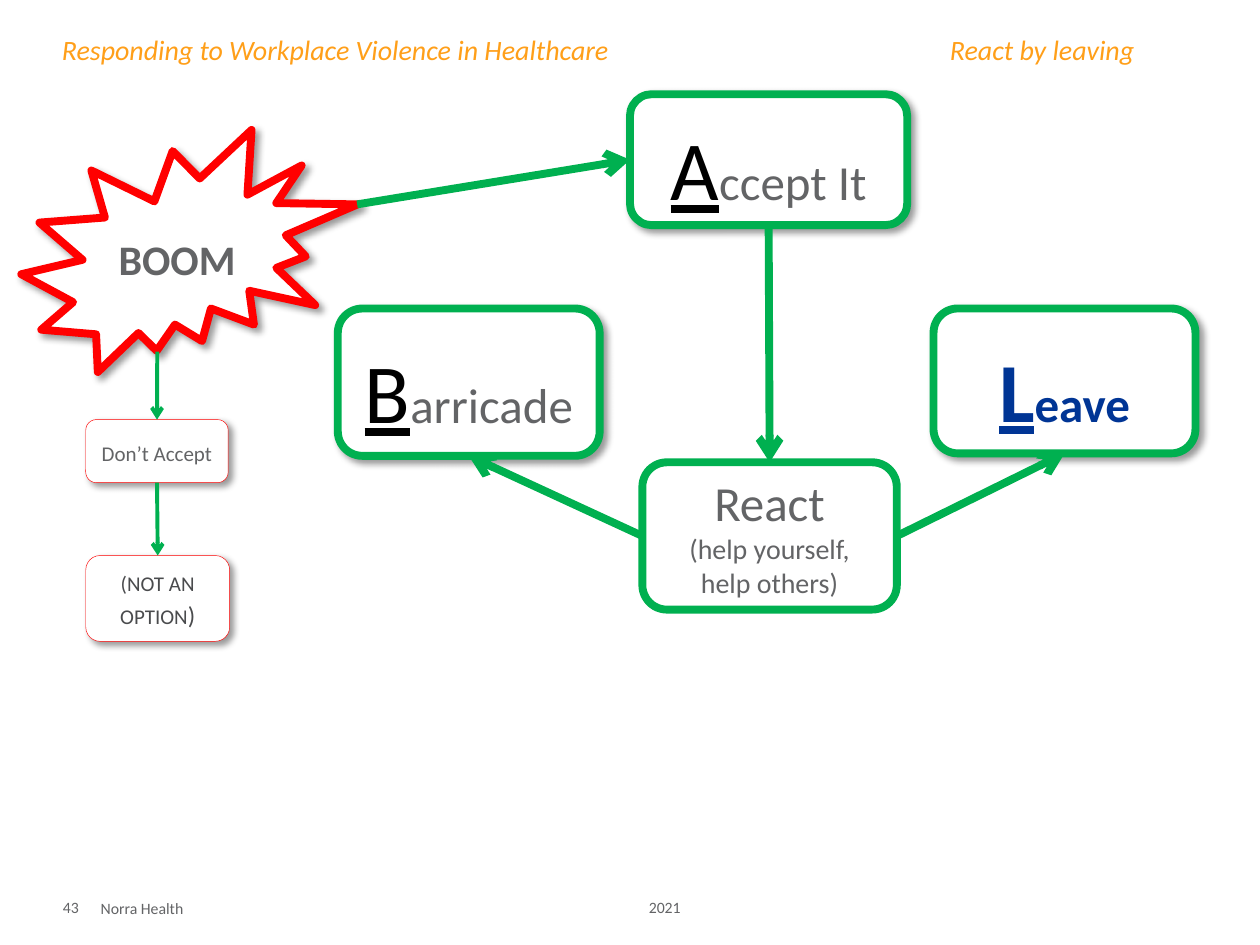
from lxml import etree
from pptx import Presentation
from pptx.dml.color import RGBColor
from pptx.enum.shapes import MSO_CONNECTOR, MSO_SHAPE
from pptx.enum.text import MSO_ANCHOR, PP_ALIGN
from pptx.oxml.ns import qn
from pptx.util import Cm, Pt

SEAL = MSO_SHAPE.EXPLOSION2
ROUND = MSO_SHAPE.ROUNDED_RECTANGLE
LINE = MSO_CONNECTOR.STRAIGHT
TOP, LEFT, BOTTOM, RIGHT = range(4)
HIGH, MIDDLE, LOW = MSO_ANCHOR.TOP, MSO_ANCHOR.MIDDLE, MSO_ANCHOR.BOTTOM
FONT = "Calibri"
HEX = {
    "white": "FFFFFF", "black": "000000", "grey": "636466", "dark": "4A4B4D",
    "red": "FF0000", "green": "00B050", "blue": "003595", "orange": "FF9F19",
}


def color(name):
    return RGBColor.from_string(HEX[name])


def style(run, size, tint="grey", bold=False, under=False, italic=False):
    font = run.font
    font.name, font.size = FONT, Pt(size)
    font.bold, font.underline, font.italic = bold, under, italic
    font.color.rgb = color(tint)


def add_shadow(shape):
    effects = shape._element.spPr.find(qn("a:effectLst"))
    outer = etree.SubElement(effects, qn("a:outerShdw"), blurRad=str(Pt(4)),
                             dist=str(Pt(3)), dir="2700000", algn="tl", rotWithShape="0")
    tint = etree.SubElement(outer, qn("a:srgbClr"), val=HEX["black"])
    etree.SubElement(tint, qn("a:alpha"), val="40000")


def add_box(slide, place, paras, edge="green", width=4.5, kind=ROUND, raised=True):
    """Each paragraph is a list of (text, style options) runs."""
    box = slide.shapes.add_shape(kind, *map(Cm, place))
    box.shadow.inherit = False
    box.fill.solid()
    box.fill.fore_color.rgb = color("white")
    box.line.color.rgb = color(edge)
    box.line.width = Pt(width)
    frame = box.text_frame
    frame.word_wrap = True
    frame.vertical_anchor = MIDDLE
    for i, runs in enumerate(paras):
        para = frame.add_paragraph() if i else frame.paragraphs[0]
        para.alignment = PP_ALIGN.CENTER
        if raised:
            para.line_spacing, para.space_after = 1.15, Pt(10)
        for text, look in runs:
            run = para.add_run()
            run.text = text
            style(run, **look)
    if raised:
        add_shadow(box)
    return box


def add_step(slide, place, first, rest, tint="black", tail="grey", bold=False):
    """Box whose word opens with a large underlined letter."""
    runs = [(first, dict(size=48, tint=tint, under=True, bold=bold)),
            (rest, dict(size=28, tint=tail, bold=bold))]
    return add_box(slide, place, [runs])


def add_arrow(slide, start, end, width=4.5):
    """Start is a point or a (box, side) pair; end is a (box, side) pair."""
    arrow = slide.shapes.add_connector(LINE, 0, 0, 0, 0)
    first, second = start
    if isinstance(first, float):
        arrow.begin_x, arrow.begin_y = Cm(first), Cm(second)
    else:
        arrow.begin_connect(first, second)
    arrow.end_connect(*end)
    arrow.line.color.rgb = color("green")
    arrow.line.width = Pt(width)
    etree.SubElement(arrow.line._get_or_add_ln(), qn("a:tailEnd"), type="arrow")
    etree.SubElement(arrow._element.spPr, qn("a:effectLst"))


def add_text(slide, place, text, anchor, tab=None, inset=0, **look):
    frame = slide.shapes.add_textbox(*map(Cm, place)).text_frame
    frame.word_wrap = True
    frame.vertical_anchor = anchor
    frame.margin_left = frame.margin_right = frame.margin_bottom = 0
    frame.margin_top = Cm(inset)
    para = frame.paragraphs[0]
    para.text = text
    if tab:
        stops = etree.SubElement(para._p.get_or_add_pPr(), qn("a:tabLst"))
        etree.SubElement(stops, qn("a:tab"), pos=str(Cm(tab)), algn="l")
    for run in para.runs:
        style(run, **look)


def main():
    deck = Presentation()
    deck.slide_width, deck.slide_height = Cm(25.4), Cm(19.05)
    slide = deck.slides.add_slide(deck.slide_layouts[6])

    add_text(slide, (1.25, 0.66, 22.86, 2.13),
             "Responding to Workplace Violence in Healthcare\tReact by leaving",
             HIGH, tab=17.9, size=16, tint="orange", italic=True)

    add_box(slide, (0.43, 2.62, 6.78, 4.88), [[("BOOM", dict(size=24, bold=True))]],
            edge="red", kind=SEAL)
    accept = add_step(slide, (12.7, 1.9, 5.59, 2.64), "A", "ccept It")
    refuse = add_box(slide, (1.73, 8.46, 2.87, 1.27),
                     [[("Don’t Accept", dict(size=12))]], edge="red", width=0.25)
    react = add_box(slide, (12.95, 9.32, 5.13, 2.97),
                    [[("React", dict(size=28))],
                     [("(help yourself, help others)", dict(size=16))]], raised=False)
    block = add_step(slide, (6.81, 6.22, 5.28, 2.97), "B", "arricade")
    leave = add_step(slide, (18.82, 6.22, 5.28, 2.92), "L", "eave",
                     tint="blue", tail="blue", bold=True)
    never = add_box(slide, (1.73, 11.2, 2.9, 1.73),
                    [[("(NOT AN OPTION", dict(size=12, tint="dark")),
                      (")", dict(size=14, tint="dark"))]], edge="red", width=0.25)

    add_arrow(slide, (7.2, 4.12), (accept, LEFT))
    add_arrow(slide, (3.17, 7.09), (refuse, TOP), width=2.25)
    add_arrow(slide, (refuse, BOTTOM), (never, TOP), width=2.25)
    add_arrow(slide, (accept, BOTTOM), (react, TOP))
    add_arrow(slide, (react, LEFT), (block, BOTTOM))
    add_arrow(slide, (react, RIGHT), (leave, BOTTOM))

    add_text(slide, (13.08, 17.98, 4.06, 0.51), "2021", LOW, size=9)
    add_text(slide, (2.03, 17.98, 10.16, 0.51), "Norra Health", MIDDLE, inset=0.13, size=9)
    add_text(slide, (1.27, 17.7, 1.27, 0.79), "43", LOW, size=9)

    deck.save("out.pptx")


if __name__ == "__main__":
    main()
